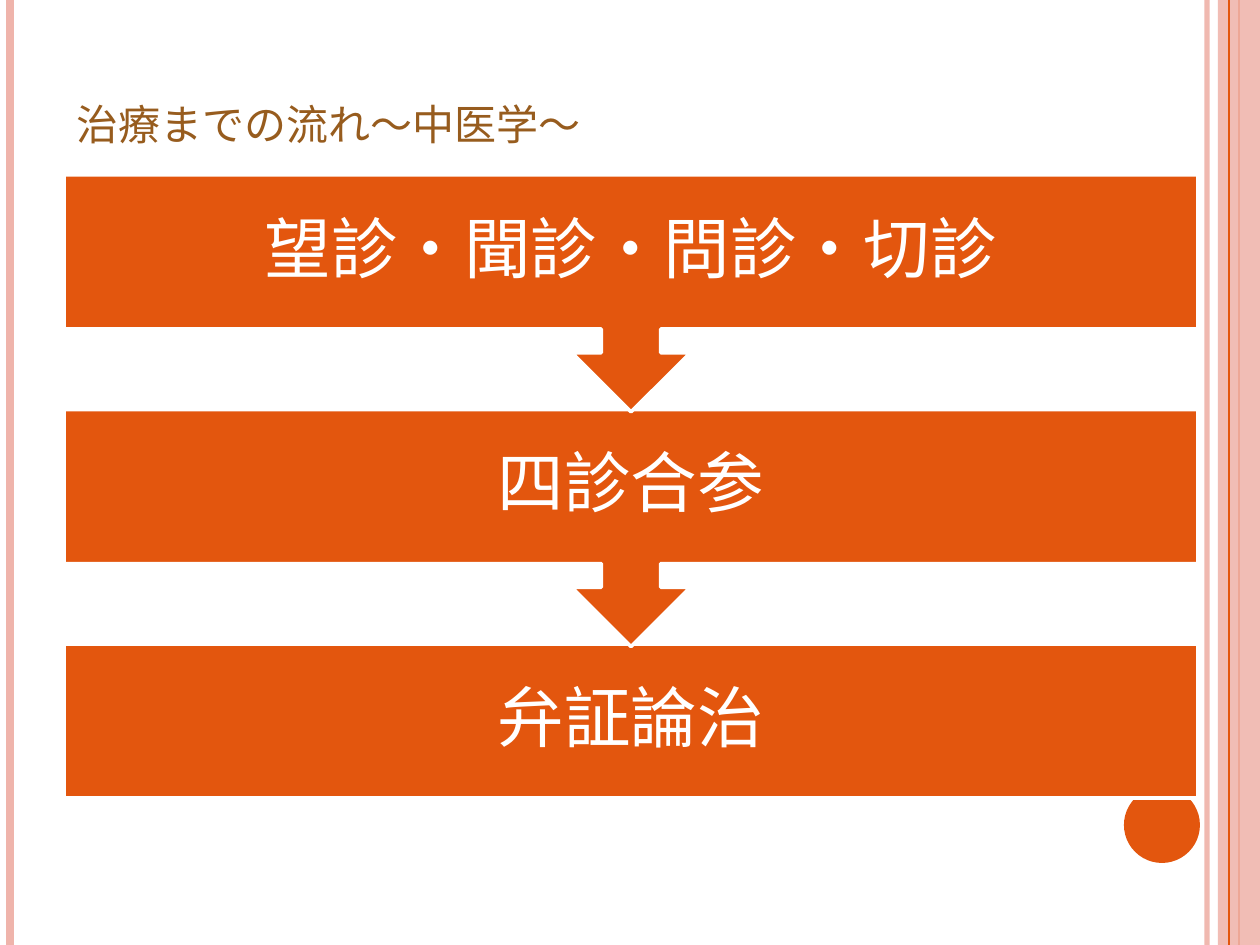
from lxml import etree
from pptx import Presentation
from pptx import util as u
from pptx.dml.color import RGBColor
from pptx.enum import shapes, text
from pptx.oxml.ns import qn

# Content
TITLE = "治療までの流れ～中医学～"
STEPS = ["望診・聞診・問診・切診", "四診合参", "弁証論治"]

ORANGE = RGBColor(0xE3, 0x56, 0x0E)
PINK = RGBColor(0xEF, 0xB4, 0xAB)
BROWN = RGBColor(0x97, 0x5C, 0x1E)
WHITE = RGBColor(0xFF, 0xFF, 0xFF)
FONT = "Calibri"

# Layout in px, 126 to the inch
PX = 914400 / 126
WIDTH, HEIGHT = 1260, 945
LEFT, TOP, STEP_WIDTH = 64, 175, 1134
BAR, CALLOUT, PITCH = 154, 237, 234.5

# Vertical rules: x, colour, points, opacity in percent
BACK_RULES = [(1207, PINK, 3, 93), (10, PINK, 4.5, 100), (1239, ORANGE, 1.5, 100)]
FRONT_RULES = [(1229, ORANGE, 0.75, 100)]

deck = Presentation()
deck.slide_width, deck.slide_height = round(WIDTH * PX), round(HEIGHT * PX)
page = deck.slides.add_slide(deck.slide_layouts[6])


def emu(*lengths):
    return [round(length * PX) for length in lengths]


def set_opacity(part, percent):
    for colour in part.iter(qn("a:srgbClr")):
        etree.SubElement(colour, qn("a:alpha"), val=str(percent * 1000))


def add_rule(x, colour, points, opacity):
    rule = page.shapes.add_connector(shapes.MSO_CONNECTOR.STRAIGHT, *emu(x, 0, x, HEIGHT))
    rule.line.color.rgb = colour
    rule.line.width = u.Pt(points)
    properties = rule._element.spPr
    if opacity < 100:
        set_opacity(properties, opacity)
    etree.SubElement(properties, qn("a:effectLst"))


def add_block(kind, place, colour, outline=None):
    block = page.shapes.add_shape(kind, *emu(*place))
    block.shadow.inherit = False
    block.fill.solid()
    block.fill.fore_color.rgb = colour
    if outline:
        block.line.color.rgb = outline
        block.line.width = u.Pt(2)
    else:
        block.line.fill.background()
    return block


def write(box, words, size, colour, frame_format, para_format):
    frame = box.text_frame
    for name, value in frame_format.items():
        setattr(frame, name, value)
    para = frame.paragraphs[0]
    for name, value in para_format.items():
        setattr(para, name, value)
    span = para.add_run()
    span.text = words
    for name, value in {"name": FONT, "size": u.Pt(size)}.items():
        setattr(span.font, name, value)
    span.font.color.rgb = colour
    return span


# Side decoration
for rule in BACK_RULES:
    add_rule(*rule)
band = add_block(shapes.MSO_SHAPE.RECTANGLE, (1218, 0, 42, HEIGHT), PINK)
set_opacity(band._element.spPr, 87)
for rule in FRONT_RULES:
    add_rule(*rule)
add_block(shapes.MSO_SHAPE.OVAL, (1124, 787, 76, 76), ORANGE)

# Title in small capitals
title = page.shapes.add_textbox(*emu(LEFT, 37, 1029, 120))
span = write(title, TITLE, 30, BROWN,
             {"word_wrap": True, "vertical_anchor": text.MSO_ANCHOR.BOTTOM}, {})
span._r.get_or_add_rPr().set("cap", "small")

# Steps, last one first so that each arrow lies over the next bar
inset = u.Inches(0.3)
STEP_FRAME = {"word_wrap": True, "vertical_anchor": text.MSO_ANCHOR.MIDDLE,
              "margin_left": inset, "margin_right": inset,
              "margin_top": inset, "margin_bottom": inset}
STEP_PARA = {"alignment": text.PP_ALIGN.CENTER, "line_spacing": 0.9}
for index, words in reversed(list(enumerate(STEPS))):
    top = TOP + index * PITCH
    bar_place = (LEFT, top, STEP_WIDTH, BAR)
    if index == len(STEPS) - 1:
        box = add_block(shapes.MSO_SHAPE.RECTANGLE, bar_place, ORANGE, WHITE)
    else:
        callout = add_block(shapes.MSO_SHAPE.UP_ARROW_CALLOUT,
                            (LEFT, top, STEP_WIDTH, CALLOUT), ORANGE, WHITE)
        callout.rotation = 180
        callout.adjustments[3] = BAR / CALLOUT
        box = page.shapes.add_textbox(*emu(*bar_place))
    write(box, words, 38, WHITE, STEP_FRAME, STEP_PARA)

deck.save("out.pptx")
